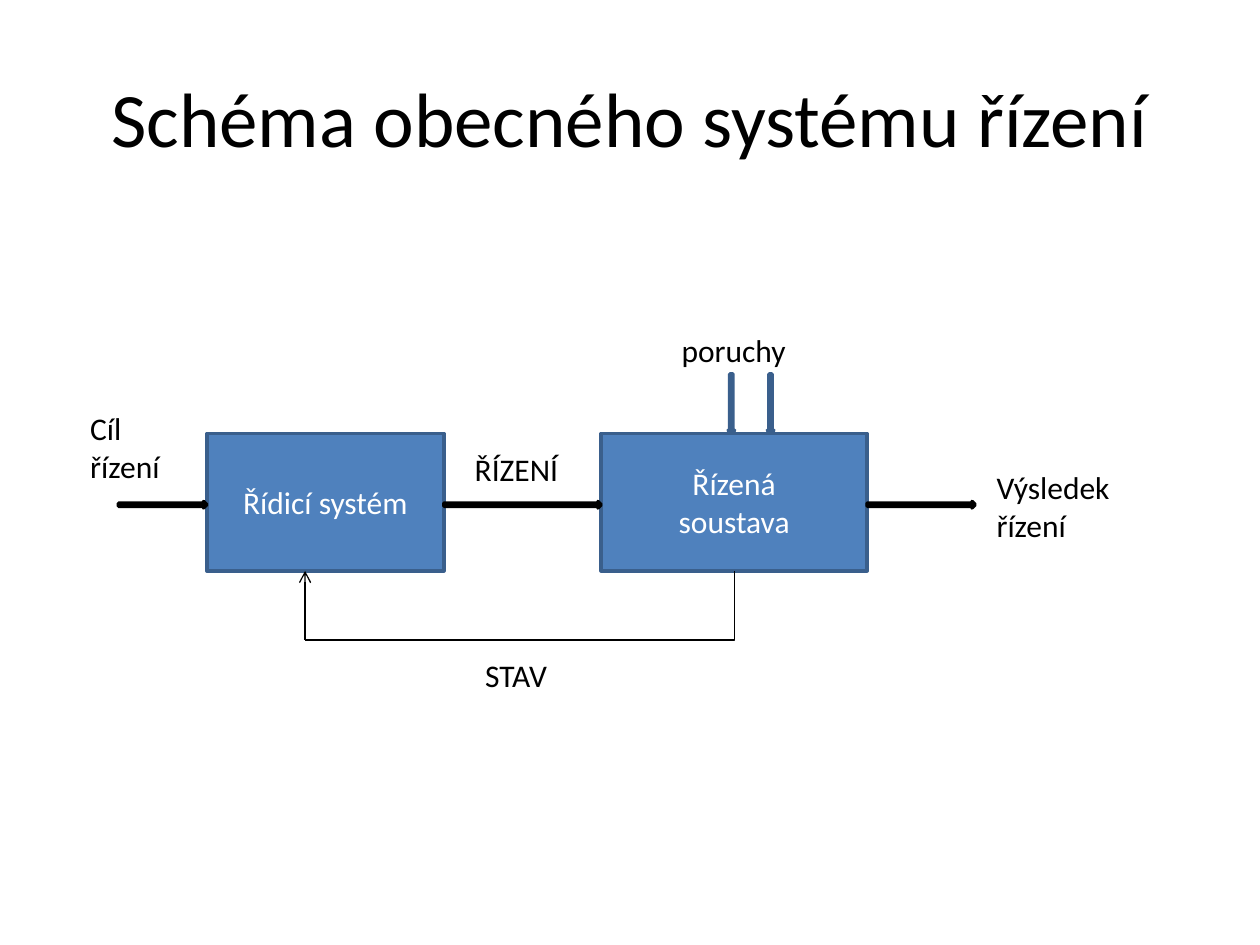
from lxml import etree
from pptx import Presentation
from pptx.dml.color import RGBColor
from pptx.enum.shapes import MSO_CONNECTOR as CONN, MSO_SHAPE as SHAPE
from pptx.enum.text import MSO_ANCHOR as ANCHOR, MSO_AUTO_SIZE as AUTO, PP_ALIGN as ALIGN
from pptx.oxml.ns import qn
from pptx.util import Cm, Pt

BLACK = RGBColor(0x00, 0x00, 0x00)
WHITE = RGBColor(0xFF, 0xFF, 0xFF)
BLUE = RGBColor(0x4F, 0x81, 0xBD)
DARK_BLUE = RGBColor(0x3A, 0x5F, 0x8C)

# Content; all lengths in cm
TITLE = "Schéma obecného systému řízení"
BLOCK_TOP, BLOCK_HEIGHT = 8.74, 2.77
BLOCKS = [  # lines, left, width
    (["Řídicí systém"], 4.17, 4.78),
    (["Řízená", "soustava"], 12.12, 5.36),
]
LABELS = [  # lines, left, top, width, height
    (["Výsledek", "řízení"], 19.84, 9.32, 3.12, 1.8),
    (["poruchy"], 13.49, 6.55, 2.79, 1.02),
    (["Cíl", "řízení"], 1.57, 8.13, 2.11, 1.8),
    (["ŘÍZENÍ"], 9.32, 8.94, 2.62, 1.02),
    (["STAV"], 9.53, 13.11, 2.08, 1.02),
]
INPUT_LEFT, OUTPUT_RIGHT = 2.39, 19.66
FLOW_TOP, ARROW_THICKNESS = 10.11, 0.13
DISTURBANCE_LEFTS, DISTURBANCE_TOP = (14.68, 15.47), 7.54
STATE_X, STATE_Y = 6.15, 12.9

prs = Presentation()
prs.slide_width, prs.slide_height = Cm(25.4), Cm(19.05)
slide = prs.slides.add_slide(prs.slide_layouts[6])


def write(shape, lines, size=18, color=BLACK, align=ALIGN.LEFT,
          anchor=ANCHOR.TOP, wrap=True):
    frame = shape.text_frame
    frame.word_wrap, frame.vertical_anchor = wrap, anchor
    frame.text = "\n".join(lines)
    for paragraph in frame.paragraphs:
        paragraph.alignment = align
        font = paragraph.runs[0].font
        font.name, font.size, font.color.rgb = "Calibri", Pt(size), color


def add_part(kind, left, top, width, height, fill=BLUE, line=DARK_BLUE):
    part = slide.shapes.add_shape(kind, Cm(left), Cm(top), Cm(width), Cm(height))
    part.shadow.inherit = False
    part.fill.solid()
    part.fill.fore_color.rgb = fill
    part.line.color.rgb, part.line.width = line, Pt(2)
    return part


def add_line(kind, x1, y1, x2, y2):
    line = slide.shapes.add_connector(kind, Cm(x1), Cm(y1), Cm(x2), Cm(y2))
    line.line.color.rgb, line.line.width = BLACK, Pt(0.75)
    etree.SubElement(line._element.spPr, qn("a:effectLst"))
    return line


# Title
title = slide.shapes.add_textbox(Cm(1.27), Cm(0.76), Cm(22.86), Cm(3.18))
write(title, [TITLE], size=44, align=ALIGN.CENTER, anchor=ANCHOR.MIDDLE)

# Blocks
blocks = []
for lines, left, width in BLOCKS:
    block = add_part(SHAPE.RECTANGLE, left, BLOCK_TOP, width, BLOCK_HEIGHT)
    write(block, lines, color=WHITE, align=ALIGN.CENTER, anchor=ANCHOR.MIDDLE)
    blocks.append(block)
controller, plant = blocks

# Flow arrows fill the gaps before, between and after the blocks
starts = [INPUT_LEFT] + [left + width for _, left, width in BLOCKS]
ends = [left for _, left, _ in BLOCKS] + [OUTPUT_RIGHT]
for start, end in zip(starts, ends):
    add_part(SHAPE.RIGHT_ARROW, start, FLOW_TOP, end - start, ARROW_THICKNESS,
             fill=BLACK, line=BLACK)

# Disturbances
for left in DISTURBANCE_LEFTS:
    add_part(SHAPE.DOWN_ARROW, left, DISTURBANCE_TOP, ARROW_THICKNESS,
             BLOCK_TOP - DISTURBANCE_TOP)

# State feedback: a one-bend connector turned by 90 degrees, then an arrow up
block_bottom = BLOCK_TOP + BLOCK_HEIGHT
plant_x = BLOCKS[1][1] + BLOCKS[1][2] / 2
drop, run = STATE_Y - block_bottom, plant_x - STATE_X
center_x, center_y = (STATE_X + plant_x) / 2, (block_bottom + STATE_Y) / 2
feedback = add_line(CONN.ELBOW, plant_x, block_bottom, STATE_X, STATE_Y)
feedback.begin_connect(plant, 2)
feedback_pr = feedback._element.spPr
feedback_pr.find(qn("a:prstGeom")).set("prst", "bentConnector2")
xfrm = feedback_pr.find(qn("a:xfrm"))
xfrm.attrib.pop("flipH", None)
xfrm.set("rot", str(90 * 60000))
feedback.left, feedback.top = Cm(center_x - drop / 2), Cm(center_y - run / 2)
feedback.width, feedback.height = Cm(drop), Cm(run)

state = add_line(CONN.STRAIGHT, STATE_X, STATE_Y, STATE_X, block_bottom)
etree.SubElement(state.line._get_or_add_ln(), qn("a:tailEnd"), type="arrow")

# Labels
for lines, left, top, width, height in LABELS:
    label = slide.shapes.add_textbox(Cm(left), Cm(top), Cm(width), Cm(height))
    write(label, lines, wrap=False)
    label.text_frame.auto_size = AUTO.SHAPE_TO_FIT_TEXT

prs.save("out.pptx")
